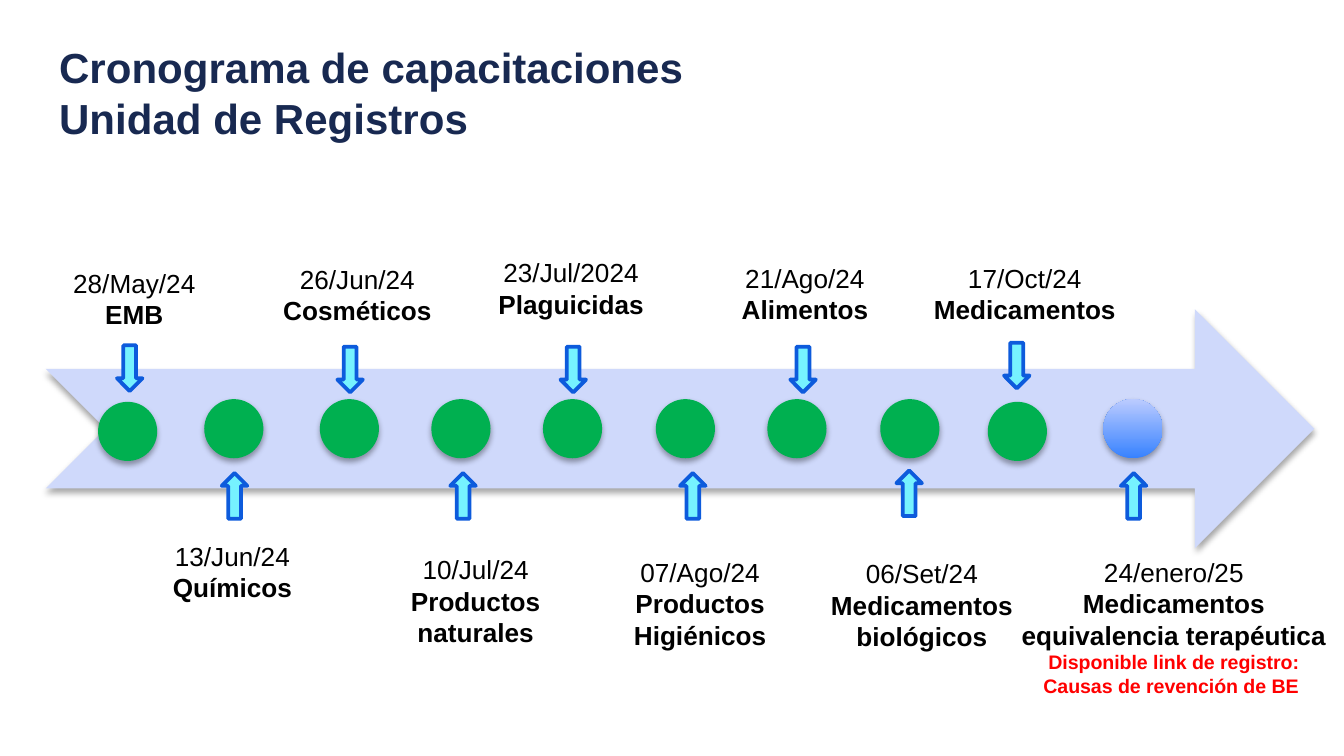
import pptx
import pptx.dml.color
import pptx.enum.shapes
import pptx.enum.text
import pptx.oxml
import pptx.oxml.ns
import pptx.util

Inches = pptx.util.Inches
RGBColor = pptx.dml.color.RGBColor
Shapes = pptx.enum.shapes.MSO_SHAPE
Align = pptx.enum.text.PP_ALIGN

NAVY = RGBColor(0x18, 0x29, 0x51)
BLACK = RGBColor(0, 0, 0)
RED = RGBColor(0xFF, 0, 0)
LAVENDER = RGBColor(0xCF, 0xD9, 0xFB)
GREEN = RGBColor(0, 0xB0, 0x50)
CYAN = RGBColor(0x76, 0xF2, 0xFF)
BLUE = RGBColor(0x0D, 0x5B, 0xDC)
PENDING = (RGBColor(0x37, 0x82, 0xFF), RGBColor(0xBB, 0xCB, 0xFF))

TITLE = "Cronograma de capacitaciones\vUnidad de Registros"
NOTE = "Disponible link de registro: Causas de revención de BE "

# date, topic, label box, dot position, pointer position
SESSIONS = [
    ("28/May/24", "EMB", (0.07, 1.94, 1.86, 0.57), (0.73, 2.99), (0.87, 2.57)),
    ("13/Jun/24", "Químicos", (0.8, 3.97, 1.86, 0.57), (1.52, 2.97), (1.65, 3.52)),
    ("26/Jun/24", "Cosméticos", (1.73, 1.91, 1.86, 0.57), (2.38, 2.97), (2.51, 2.58)),
    ("10/Jul/24", "Productos naturales", (2.61, 4.07, 1.86, 0.81), (3.21, 2.97), (3.35, 3.52)),
    ("23/Jul/2024", "Plaguicidas", (3.32, 1.86, 1.86, 0.57), (4.04, 2.97), (4.17, 2.58)),
    ("07/Ago/24", "Productos Higiénicos", (4.28, 4.09, 1.86, 0.81), (4.88, 2.97), (5.06, 3.52)),
    ("21/Ago/24", "Alimentos", (5.06, 1.9, 1.86, 0.57), (5.71, 2.97), (5.88, 2.58)),
    ("06/Set/24", "Medicamentos biológicos", (5.93, 4.1, 1.86, 0.81), (6.55, 2.97), (6.67, 3.5)),
    ("17/Oct/24", "Medicamentos", (6.75, 1.9, 1.75, 0.57), (7.35, 2.99), (7.47, 2.55)),
    ("24/enero/25", "Medicamentos equivalencia terapéutica", (7.47, 4.09, 2.53, 1.16),
     (8.21, 2.97), (8.34, 3.52)),
]
DOT_SIZE = (0.44, 0.44)
POINTER_SIZE = (0.19, 0.34)

SHADOW = (
    '<a:outerShdw %s blurRad="39370" dist="22860" dir="5400000" rotWithShape="0">'
    '<a:srgbClr val="000000"><a:alpha val="35000"/></a:srgbClr></a:outerShdw>'
    % pptx.oxml.ns.nsdecls("a")
)


def write(paragraph, text, size=14, color=BLACK, bold=False, align=Align.CENTER):
    paragraph.text = text
    paragraph.alignment = align
    paragraph.line_spacing = 1.0
    for run in paragraph.runs:
        run.font.name = "Arial"
        run.font.size = pptx.util.Pt(size)
        run.font.bold = bold
        run.font.color.rgb = color


def add_figure(slide, kind, box, color, shadow=True):
    shape = slide.shapes.add_shape(kind, *map(Inches, box))
    shape.shadow.inherit = False
    if shadow:
        effects = shape._element.spPr.find(pptx.oxml.ns.qn("a:effectLst"))
        effects.append(pptx.oxml.parse_xml(SHADOW))
    shape.fill.solid()
    shape.fill.fore_color.rgb = color
    shape.line.fill.background()
    return shape


def add_label(slide, box, date, topic, note=None):
    frame = slide.shapes.add_textbox(*map(Inches, box)).text_frame
    frame.word_wrap = True
    write(frame.paragraphs[0], date)
    write(frame.add_paragraph(), topic, bold=True)
    if note:
        write(frame.add_paragraph(), note, size=10.5, color=RED, bold=True)


def add_pointer(slide, position, upward):
    pointer = add_figure(slide, Shapes.DOWN_ARROW, position + POINTER_SIZE, CYAN, shadow=False)
    pointer.line.color.rgb = BLUE
    pointer.line.width = pptx.util.Pt(2)
    pointer.rotation = 180 if upward else 0


def add_title(slide):
    title = slide.shapes.title
    title.left, title.top, title.width, title.height = map(Inches, (0.34, 0.21, 5.48, 0.63))
    frame = title.text_frame
    frame.margin_left = frame.margin_right = Inches(0.1)
    frame.margin_top = frame.margin_bottom = Inches(0.1)
    frame.vertical_anchor = pptx.enum.text.MSO_ANCHOR.TOP
    frame.auto_size = pptx.enum.text.MSO_AUTO_SIZE.NONE
    frame.word_wrap = True
    write(frame.paragraphs[0], TITLE, size=22.5, color=NAVY, bold=True, align=Align.LEFT)


def main():
    presentation = pptx.Presentation()
    presentation.slide_width = Inches(10)
    presentation.slide_height = Inches(10 * 9 / 16)
    slide = presentation.slides.add_slide(presentation.slide_layouts[5])
    add_title(slide)
    add_figure(slide, Shapes.NOTCHED_RIGHT_ARROW, (0.34, 2.3, 9.44, 1.78), LAVENDER)

    last = len(SESSIONS) - 1
    for index, (date, topic, label_box, dot, pointer) in enumerate(SESSIONS):
        circle = add_figure(slide, Shapes.OVAL, dot + DOT_SIZE, GREEN)
        if index == last:
            circle.fill.gradient()
            circle.fill.gradient_angle = 90
            for stop, color in zip(circle.fill.gradient_stops, PENDING):
                stop.color.rgb = color
        add_label(slide, label_box, date, topic, NOTE if index == last else None)
        add_pointer(slide, pointer, upward=index % 2 == 1)

    presentation.save("out.pptx")


if __name__ == "__main__":
    main()
